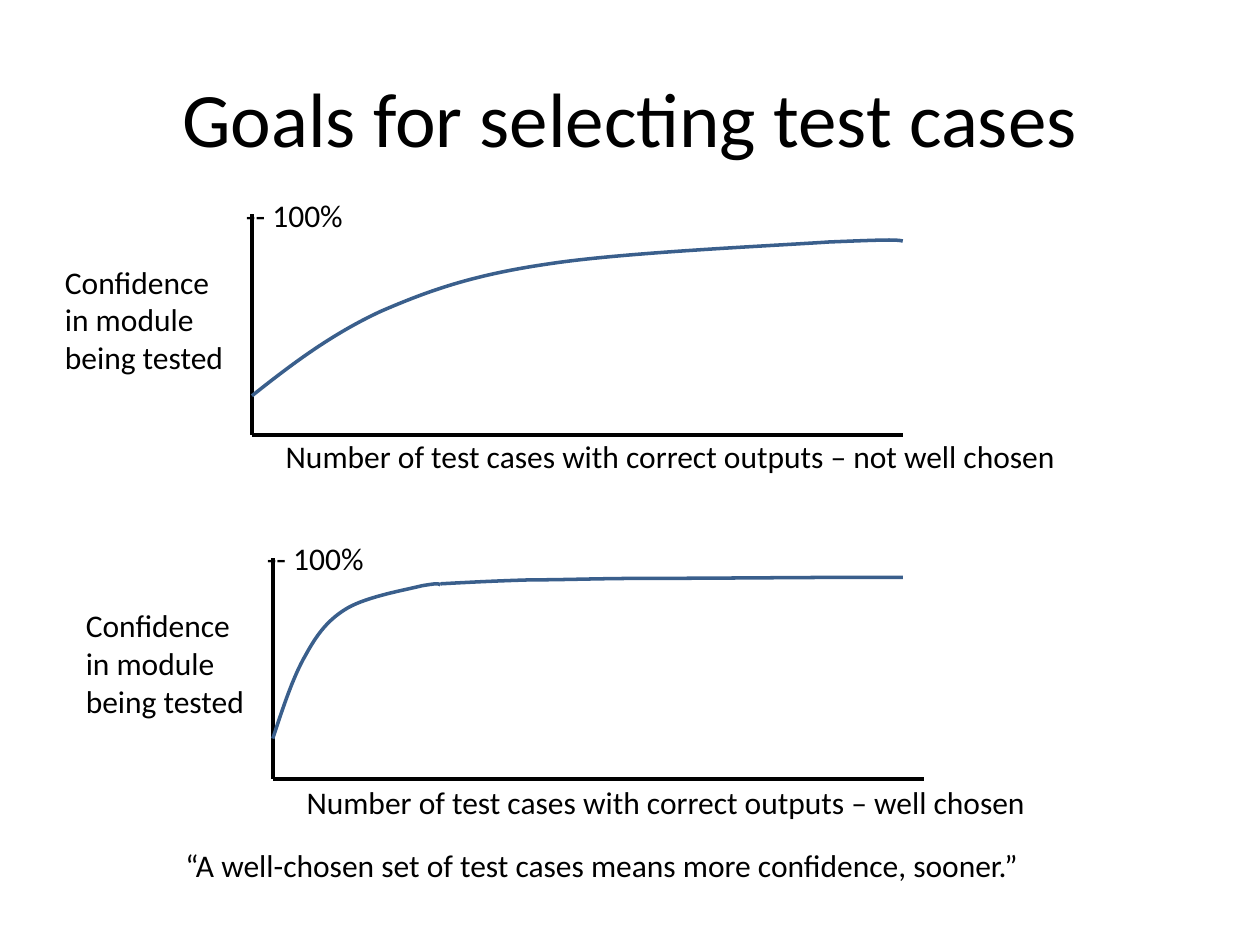
from lxml import etree
from pptx import Presentation
from pptx.dml.color import RGBColor
from pptx.enum.shapes import MSO_CONNECTOR
from pptx.enum.text import MSO_ANCHOR, PP_ALIGN
from pptx.oxml.ns import qn
from pptx.util import Cm, Pt

STRAIGHT = MSO_CONNECTOR.STRAIGHT
MIDDLE, TOP = MSO_ANCHOR.MIDDLE, MSO_ANCHOR.TOP
CENTER, LEFT = PP_ALIGN.CENTER, PP_ALIGN.LEFT
COLORS = {"text": "000000", "axis": "000000", "curve": "3A5F8C"}
AXIS_WIDTH, AXIS_HEIGHT = 13.12, 4.45

# Curves are Bezier points in cm, right of and above the origin of the axes:
# a start point, then three points for every segment
CHARTS = [
    {
        "origin": (5.08, 8.77),
        "caption": "Number of test cases with correct outputs – not well chosen",
        "caption_top": -0.08,
        "curves": [
            [(0, 0.79), (0.79, 1.42), (1.6, 2.03), (2.59, 2.49),
             (3.58, 2.92), (4.47, 3.23), (5.99, 3.45),
             (7.49, 3.68), (10.44, 3.81), (11.63, 3.89),
             (12.83, 3.94), (12.98, 3.94), (13.12, 3.91)],
        ],
    },
    {
        "origin": (5.5, 15.7),
        "caption": "Number of test cases with correct outputs – well chosen",
        "caption_top": -0.03,
        "curves": [
            [(0, 0.81), (0.2, 1.42), (0.41, 2.06), (0.66, 2.49),
             (0.91, 2.95), (1.14, 3.23), (1.52, 3.45),
             (1.93, 3.68), (2.69, 3.81), (3, 3.89),
             (3.3, 3.94), (3.33, 3.94), (3.38, 3.91)],
            [(3.38, 3.93), (3.94, 3.96), (4.5, 3.99), (5.21, 4.01),
             (5.92, 4.01), (6.55, 4.04), (7.62, 4.04),
             (8.69, 4.04), (10.8, 4.06), (11.63, 4.06),
             (12.47, 4.06), (12.57, 4.06), (12.7, 4.06)],
        ],
    },
]

presentation = Presentation()
presentation.slide_width, presentation.slide_height = Cm(25.4), Cm(19.05)
slide = presentation.slides.add_slide(presentation.slide_layouts[6])


def add_text(text, left, top, width, height, size=18, wrap=True,
             align=LEFT, anchor=TOP):
    shape = slide.shapes.add_textbox(Cm(left), Cm(top), Cm(width), Cm(height))
    frame = shape.text_frame
    frame.word_wrap = wrap
    frame.vertical_anchor = anchor
    paragraph = frame.paragraphs[0]
    paragraph.alignment = align
    run = paragraph.add_run()
    run.text = text
    run.font.name = "Calibri"
    run.font.size = Pt(size)
    run.font.color.rgb = RGBColor.from_string(COLORS["text"])


def add_curve(points):
    """Draw a freeform whose points after the first form cubic Beziers."""
    builder = slide.shapes.build_freeform(*points[0])
    builder.add_line_segments(points[1:], close=False)
    shape = builder.convert_to_shape()
    outline = next(shape._element.iter(qn("a:path")))
    lines = outline.findall(qn("a:lnTo"))
    for first in range(0, len(lines), 3):
        segment = etree.SubElement(outline, qn("a:cubicBezTo"))
        for line in lines[first:first + 3]:
            segment.append(line[0])
            outline.remove(line)
    shape.shadow.inherit = False
    shape.fill.background()
    shape.line.color.rgb = RGBColor.from_string(COLORS["curve"])
    shape.line.width = Pt(2)


# Title
add_text("Goals for selecting test cases", 1.27, 0.76, 22.86, 3.18,
         size=44, align=CENTER, anchor=MIDDLE)

for chart in CHARTS:
    x, y = chart["origin"]

    # Axes
    for end_x, end_y in ((x, y - AXIS_HEIGHT), (x + AXIS_WIDTH, y)):
        axis = slide.shapes.add_connector(
            STRAIGHT, Cm(end_x), Cm(end_y), Cm(x), Cm(y))
        axis.line.color.rgb = RGBColor.from_string(COLORS["axis"])
        axis.line.width = Pt(2)
        etree.SubElement(axis._element.spPr, qn("a:effectLst"))

    # Axis labels
    add_text("Confidence in module being tested", x - 4.02, y - 3.6, 4.01, 2.57)
    add_text(chart["caption"], x + 0.43, y + chart["caption_top"], 16.94, 1.02)
    add_text("-- 100%", x - 0.37, y - 4.95, 2.49, 1.02, wrap=False)

    # Confidence curves
    for curve in chart["curves"]:
        add_curve([(Cm(x + across), Cm(y - up)) for across, up in curve])

# Conclusion
add_text("“A well-chosen set of test cases means more confidence, sooner.”",
         3.49, 16.94, 17.53, 1.02, wrap=False)

presentation.save("out.pptx")
